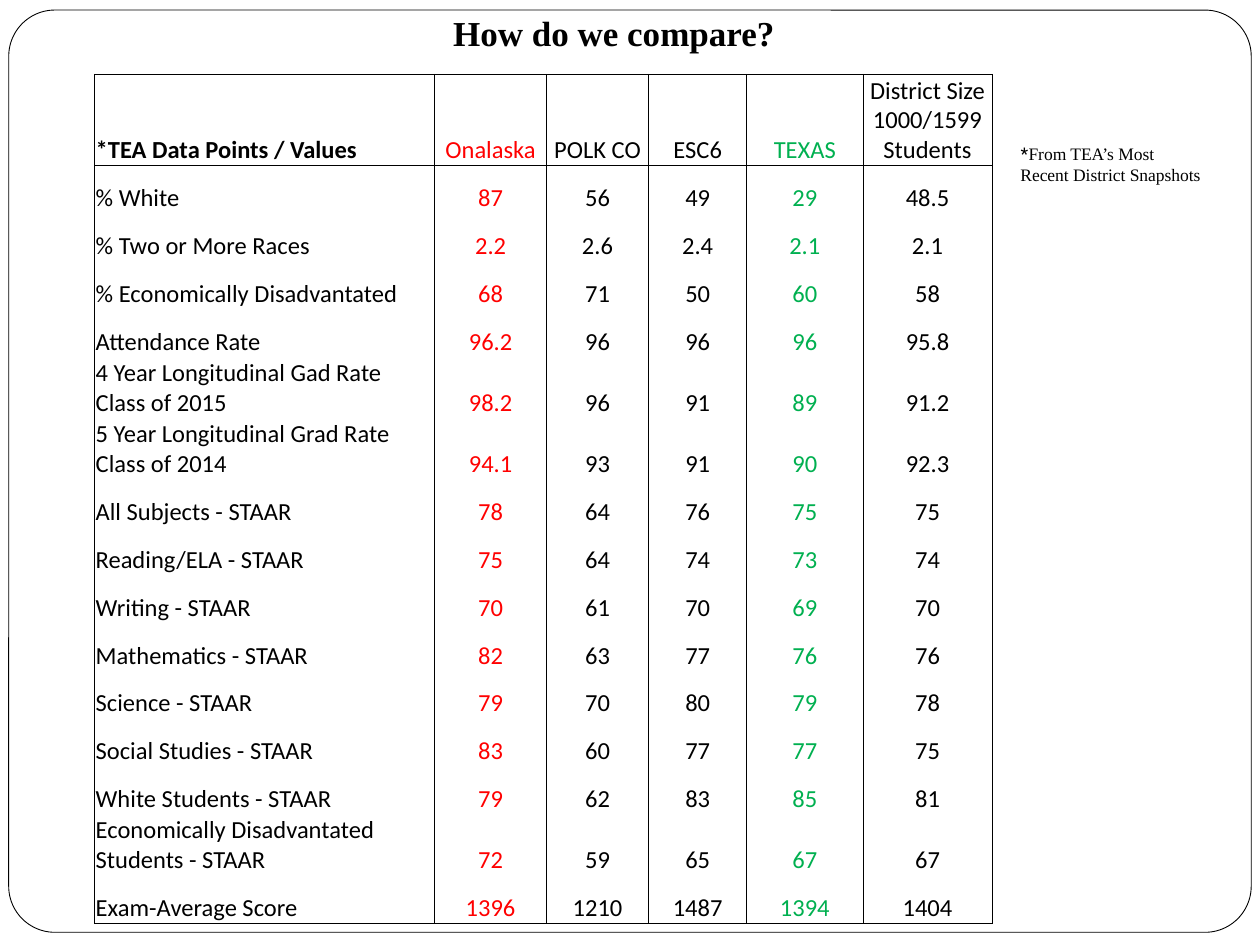
from lxml import etree
from pptx import Presentation
from pptx.dml.color import RGBColor
from pptx.enum.shapes import MSO_SHAPE
from pptx.enum.text import MSO_ANCHOR, PP_ALIGN
from pptx.oxml.ns import qn
from pptx.util import Pt

LEFT, CENTER = PP_ALIGN.LEFT, PP_ALIGN.CENTER
BOTTOM = MSO_ANCHOR.BOTTOM
ROUNDED = MSO_SHAPE.ROUNDED_RECTANGLE
BLANK_LAYOUT = 6
PLAIN_TABLE_STYLE = "{2D5ABB26-0587-4C30-8999-92F81FD0307C}"

BLACK, WHITE, RED, GREEN = "000000", "FFFFFF", "FF0000", "00B050"

TITLE = "How do we compare?"
NOTE = [("*", "Roboto Slab"),
        ("From TEA’s Most Recent District Snapshots", "Times New Roman")]
HEADER = ["*TEA Data Points / Values", "Onalaska", "POLK CO", "ESC6", "TEXAS",
          "District Size 1000/1599 Students"]
DATA = [
    ("% White", "87", "56", "49", "29", "48.5"),
    ("% Two or More Races", "2.2", "2.6", "2.4", "2.1", "2.1"),
    ("% Economically Disadvantated", "68", "71", "50", "60", "58"),
    ("Attendance Rate", "96.2", "96", "96", "96", "95.8"),
    ("4 Year Longitudinal Gad Rate Class of 2015", "98.2", "96", "91", "89", "91.2"),
    ("5 Year Longitudinal Grad Rate Class of 2014", "94.1", "93", "91", "90", "92.3"),
    ("All Subjects - STAAR", "78", "64", "76", "75", "75"),
    ("Reading/ELA - STAAR", "75", "64", "74", "73", "74"),
    ("Writing - STAAR", "70", "61", "70", "69", "70"),
    ("Mathematics - STAAR", "82", "63", "77", "76", "76"),
    ("Science - STAAR", "79", "70", "80", "79", "78"),
    ("Social Studies - STAAR", "83", "60", "77", "77", "75"),
    ("White Students - STAAR", "79", "62", "83", "85", "81"),
    ("Economically Disadvantated Students - STAAR", "72", "59", "65", "67", "67"),
    ("Exam-Average Score", "1396", "1210", "1487", "1394", "1404"),
]

COL_WIDTHS = [194.5, 63.75, 58.5, 56, 66.5, 73.75, 80.75]
COL_COLORS = [BLACK, RED, BLACK, BLACK, GREEN, BLACK]
TITLE_H, GAP_H, HEADER_H, ONE_LINE_H, TWO_LINE_H = 25.2, 11.5, 52, 27.43, 34.75
LONG_LABEL = 30  # characters that fit on one line of the first column
TABLE_LEFT, TABLE_TOP = 54, 5.75
LINE_W = 0.5
CELL_FORMAT = dict(margin_left=Pt(0.7), margin_right=Pt(0.7), margin_top=Pt(0.7),
                   margin_bottom=0, vertical_anchor=BOTTOM)


def rgb(value):
    return RGBColor.from_string(value)


def add_run(p, text, size, font, color=BLACK, bold=False):
    r = p.add_run()
    r.text = text
    for name, value in dict(size=Pt(size), name=font, bold=bold).items():
        setattr(r.font, name, value)
    r.font.color.rgb = rgb(color)


def add_borders(cell, sides):
    """Draw the cell's borders on the given sides, a string of L, R, T, B."""
    tc_pr = cell._tc.get_or_add_tcPr()
    for side in "LRTB":
        ln = etree.SubElement(tc_pr, qn(f"a:ln{side}"))
        if side in sides:
            ln.set("w", str(Pt(LINE_W)))
            fill = etree.SubElement(ln, qn("a:solidFill"))
            etree.SubElement(fill, qn("a:srgbClr"), val=BLACK)
        else:
            ln.set("w", "0")
            etree.SubElement(ln, qn("a:noFill"))


def border_sides(row, col):
    last_row, last_col = len(DATA) + 2, len(HEADER)
    if row == 0:
        return ""
    if row == 1:
        return "B" if col < last_col else ""
    if col == last_col:
        return "L"
    return "LR" + ("T" if row in (2, 3) else "") + ("B" if row in (2, last_row) else "")


def add_frame(slide):
    sp = slide.shapes.add_shape(ROUNDED, Pt(5), Pt(5.75), Pt(710), Pt(527))
    sp.adjustments[0] = 0.05
    sp.shadow.inherit = False
    sp.fill.solid()
    sp.fill.fore_color.rgb = rgb(WHITE)
    sp.line.color.rgb = rgb(BLACK)
    sp.line.width = Pt(LINE_W)


def add_note(slide):
    tf = slide.shapes.add_textbox(Pt(576), Pt(78), Pt(120), Pt(44)).text_frame
    tf.word_wrap = True
    for text, font in NOTE:
        add_run(tf.paragraphs[0], text, 10, font)


def add_comparison(slide):
    heights = [TITLE_H, GAP_H, HEADER_H] + [
        TWO_LINE_H if len(row[0]) > LONG_LABEL else ONE_LINE_H for row in DATA]
    frame = slide.shapes.add_table(len(heights), len(COL_WIDTHS), Pt(TABLE_LEFT),
                                   Pt(TABLE_TOP), Pt(sum(COL_WIDTHS)), Pt(sum(heights)))
    table = frame.table
    table.first_row = table.horz_banding = False
    table._tbl.tblPr.find(qn("a:tableStyleId")).text = PLAIN_TABLE_STYLE
    for column, width in zip(table.columns, COL_WIDTHS):
        column.width = Pt(width)
    for row, height in zip(table.rows, heights):
        row.height = Pt(height)

    contents = [[TITLE], [], HEADER] + DATA
    for i, texts in enumerate(contents):
        for j in range(len(COL_WIDTHS)):
            cell = table.cell(i, j)
            for name, value in CELL_FORMAT.items():
                setattr(cell, name, value)
            add_borders(cell, border_sides(i, j))
            cell.fill.background()
            p = cell.text_frame.paragraphs[0]
            if j >= len(texts):
                # a small size keeps empty cells from stretching their row
                etree.SubElement(p._p, qn("a:endParaRPr"), sz="800")
            elif i == 0:
                p.alignment = CENTER
                add_run(p, texts[j], 20, "Times New Roman", bold=True)
            else:
                p.alignment = CENTER if j else LEFT
                add_run(p, texts[j], 14, "Calibri", COL_COLORS[j], bold=i == 2 and j == 0)
    table.cell(0, 0).merge(table.cell(0, len(COL_WIDTHS) - 1))


def main():
    prs = Presentation()
    prs.slide_width, prs.slide_height = Pt(720), Pt(540)
    slide = prs.slides.add_slide(prs.slide_layouts[BLANK_LAYOUT])
    add_frame(slide)
    add_note(slide)
    add_comparison(slide)
    prs.save("out.pptx")


if __name__ == "__main__":
    main()
